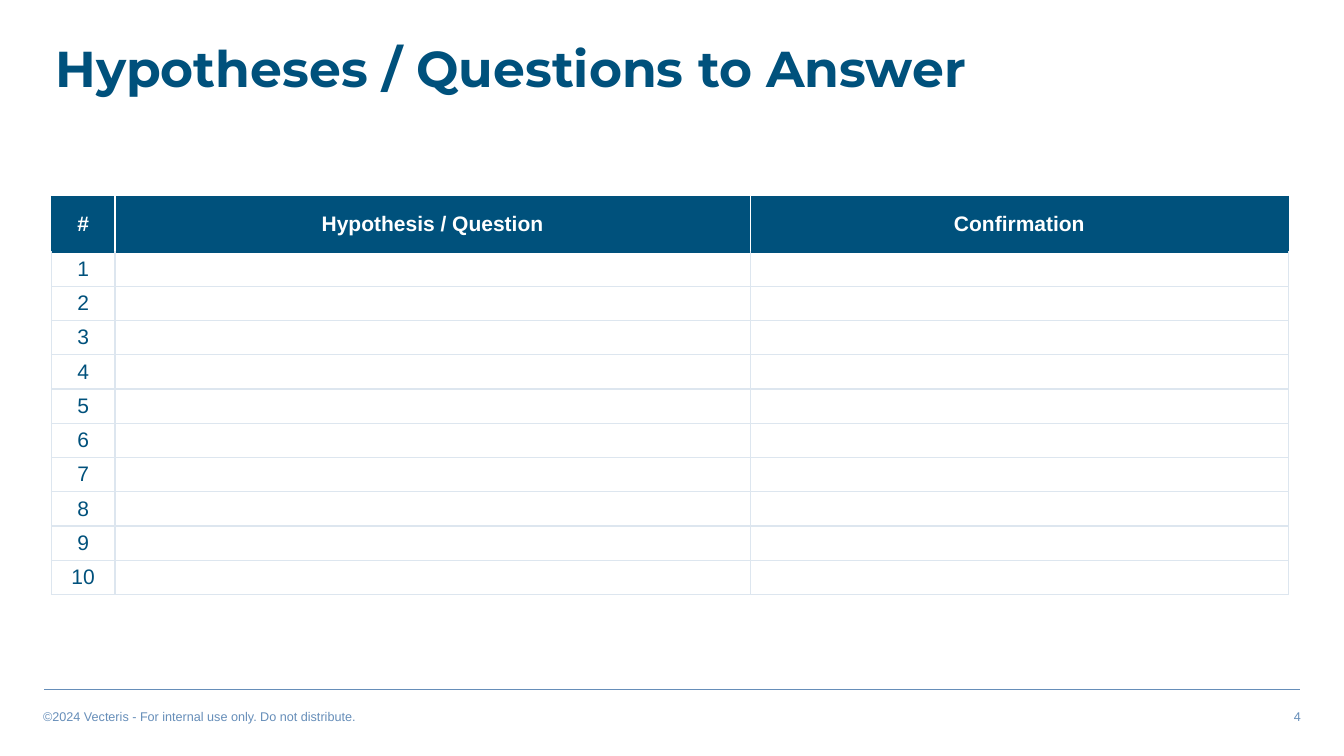
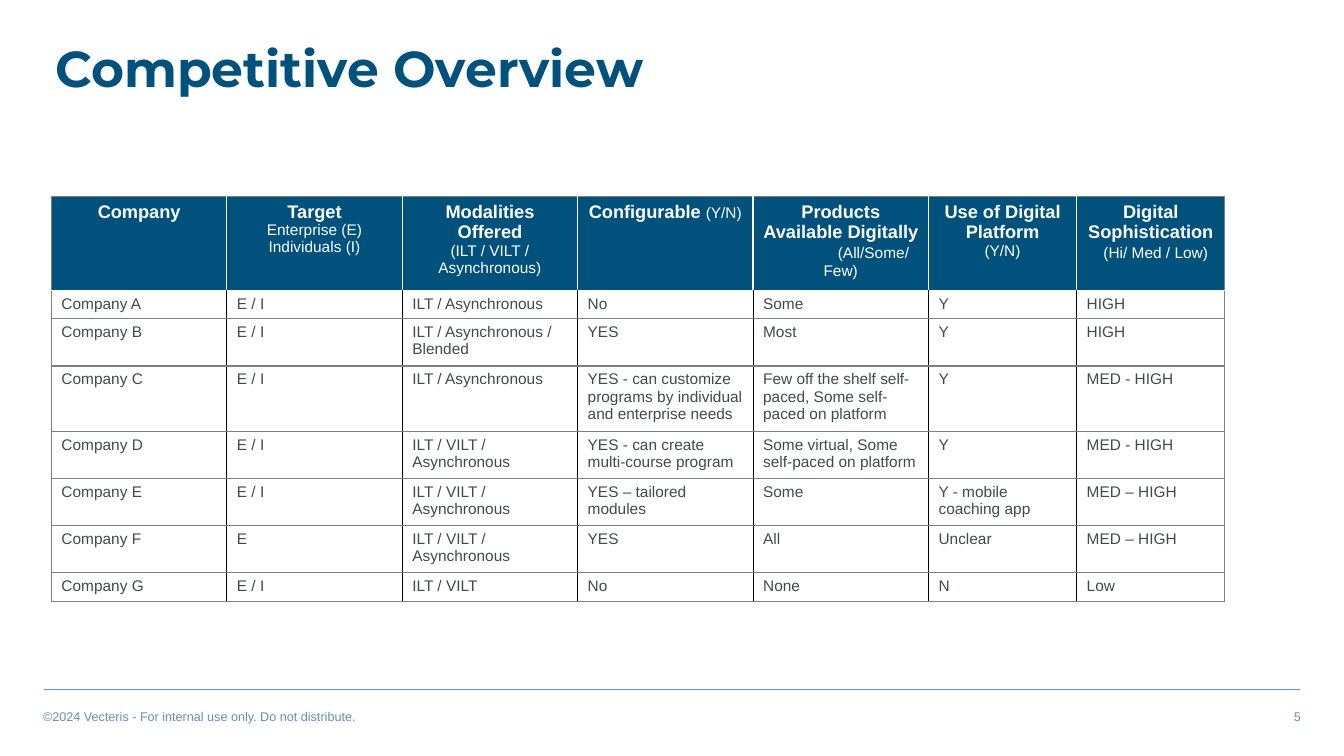
import pptx
import pptx.dml.color
import pptx.enum.shapes
import pptx.enum.text
import pptx.oxml.ns
import pptx.util
import lxml.etree

PX = 9144  # 100 px to the inch
ALIGN = pptx.enum.text.PP_ALIGN
ANCHOR = pptx.enum.text.MSO_ANCHOR

THEME = {
    "navy": "00517C", "steel": "668EB9", "pale": "DDE6EF", "white": "FFFFFF",
    "gray": "7F7F7F", "ink": "44484E", "black": "000000",
}
FONTS = {
    "title": {"name": "Montserrat", "size": 36, "bold": True, "color": "navy"},
    "foot": {"name": "Arial", "size": 9, "bold": False, "color": "steel"},
    "head": {"name": "Arial", "size": 15, "bold": True, "color": "white"},
    "num": {"name": "Arial", "size": 15, "bold": False, "color": "navy"},
    "label": {"name": "Arial", "size": 13, "bold": True, "color": "white"},
    "note": {"name": "Arial", "size": 11, "bold": False, "color": "white"},
    "body": {"name": "Arial", "size": 11, "bold": False, "color": "ink"},
}


def put(par, text, style, align=ALIGN.LEFT):
    """Add a styled run to a paragraph."""
    par.alignment = align
    run = par.add_run()
    run.text = text
    for key, value in FONTS[style].items():
        if key == "color":
            run.font.color.rgb = pptx.dml.color.RGBColor.from_string(THEME[value])
        else:
            setattr(run.font, key, pptx.util.Pt(value) if key == "size" else value)


def dress(cell, fill, edges, pad):
    """Set the margins, the four borders and the fill of a cell."""
    cell.margin_left = cell.margin_right = pad[0] * PX
    cell.margin_top = cell.margin_bottom = pad[1] * PX
    props = cell._tc.get_or_add_tcPr()
    qn = pptx.oxml.ns.qn
    for side, color in zip("LRTB", edges):
        width = pptx.util.Pt(0.75 if color == "black" else 1)
        line = lxml.etree.SubElement(props, qn("a:ln" + side), w=str(int(width)))
        solid = lxml.etree.SubElement(line, qn("a:solidFill"))
        lxml.etree.SubElement(solid, qn("a:srgbClr"), val=THEME[color])
    cell.fill.solid()
    cell.fill.fore_color.rgb = pptx.dml.color.RGBColor.from_string(THEME[fill])


# Column title, note, first-line indent of the note (None: same line)
HEADS = [
    ("Company", "", None),
    ("Target", "Enterprise (E) Individuals (I)", 0),
    ("Modalities Offered", "(ILT / VILT / Asynchronous)", 0),
    ("Configurable ", "(Y/N)", None),
    ("Products Available Digitally", "(All/Some/ Few)", 65),
    ("Use of Digital Platform", "(Y/N)", 0),
    ("Digital Sophistication", "(Hi/ Med / Low)", 10),
]
FIRMS = [
    ("Company A", "E / I", "ILT / Asynchronous", "No", "Some", "Y", "HIGH"),
    ("Company B", "E / I", "ILT / Asynchronous / Blended", "YES", "Most", "Y", "HIGH"),
    ("Company C", "E / I", "ILT / Asynchronous",
     "YES - can customize programs by individual and enterprise needs",
     "Few off the shelf self-paced, Some self-paced on platform", "Y", "MED - HIGH"),
    ("Company D", "E / I", "ILT / VILT / Asynchronous",
     "YES - can create multi-course program",
     "Some virtual, Some self-paced on platform", "Y", "MED - HIGH"),
    ("Company E", "E / I", "ILT / VILT / Asynchronous", "YES – tailored modules",
     "Some", "Y - mobile coaching app", "MED – HIGH"),
    ("Company F", "E", "ILT / VILT / Asynchronous", "YES", "All", "Unclear", "MED – HIGH"),
    ("Company G", "E / I", "ILT / VILT", "No", "None", "N", "Low"),
]
LINES = [1, 2, 3, 2, 2, 2, 1]

# Borders: side, inner column, top, bottom
SLIDES = [
    {"title": "Hypotheses / Questions to Answer", "page": 4,
     "heads": [("#", "", None), ("Hypothesis / Question", "", None),
               ("Confirmation", "", None)],
     "rows": [(str(n), "", "") for n in range(1, 11)],
     "cols": [63, 630, 534], "heights": [55] + [34] * 10, "pad": (6, 1),
     "label": "head", "body": "num", "align": ALIGN.CENTER, "anchor": ANCHOR.MIDDLE,
     "top": ("navy", "white", "navy", "navy"),
     "grid": ("pale", "pale", "pale", "pale")},
    {"title": "Competitive Overview", "page": 5, "heads": HEADS, "rows": FIRMS,
     "cols": [174] * 5 + [147] * 2, "heights": [88] + [10 + 17 * n for n in LINES],
     "pad": (10, 5),
     "label": "label", "body": "body", "align": ALIGN.LEFT, "anchor": ANCHOR.TOP,
     "top": ("gray", "white", "gray", "white"),
     "grid": ("gray", "black", "gray", "gray")},
]

deck = pptx.Presentation()
deck.slide_width, deck.slide_height = 1333 * PX, 750 * PX

for page in SLIDES:
    slide = deck.slides.add_slide(deck.slide_layouts[6])

    rule = slide.shapes.add_connector(
        pptx.enum.shapes.MSO_CONNECTOR.STRAIGHT, 44 * PX, 684 * PX, 1289 * PX, 684 * PX)
    rule.line.color.rgb = pptx.dml.color.RGBColor.from_string(THEME["steel"])
    rule.line.width = pptx.util.Pt(1)
    lxml.etree.SubElement(rule._element.spPr, pptx.oxml.ns.qn("a:effectLst"))

    texts = [
        ("©2024 Vecteris - For internal use only. Do not distribute.", "foot",
         (33, 698, 533, 25), ALIGN.LEFT),
        (str(page["page"]), "foot", (767, 698, 533, 25), ALIGN.RIGHT),
        (page["title"], "title", (45, 33, 978, 76), ALIGN.LEFT),
    ]
    for text, style, place, align in texts:
        frame = slide.shapes.add_textbox(*[v * PX for v in place]).text_frame
        frame.word_wrap = True
        if style == "title":
            frame.vertical_anchor = ANCHOR.MIDDLE
            frame.paragraphs[0].line_spacing = 0.9
        put(frame.paragraphs[0], text, style, align)

    cols, heights = page["cols"], page["heights"]
    table = slide.shapes.add_table(
        len(heights), len(cols), 51 * PX, 195 * PX,
        sum(cols) * PX, sum(heights) * PX).table
    table.first_row = table.horz_banding = False
    for col, width in zip(table.columns, cols):
        col.width = width * PX
    for row, height in zip(table.rows, heights):
        row.height = height * PX

    last = len(cols) - 1
    for r, row in enumerate([page["heads"]] + page["rows"]):
        side, inner, top, bottom = page["grid"] if r else page["top"]
        if r == 1:
            top = page["top"][3]
        for c, item in enumerate(row):
            cell = table.cell(r, c)
            edges = (inner if c else side, inner if c < last else side, top, bottom)
            dress(cell, "white" if r else "navy", edges, page["pad"])
            cell.vertical_anchor = page["anchor"]
            par = cell.text_frame.paragraphs[0]
            if r:
                if item:
                    put(par, item, page["body"], page["align"])
                continue
            label, note, indent = item
            put(par, label, page["label"], ALIGN.CENTER)
            if note:
                if indent is not None:
                    par = cell.text_frame.add_paragraph()
                put(par, note, "note", ALIGN.CENTER)
                if indent:
                    par.space_before = pptx.util.Pt(2)
                    par._p.get_or_add_pPr().set("indent", str(indent * PX))

deck.save("out.pptx")
